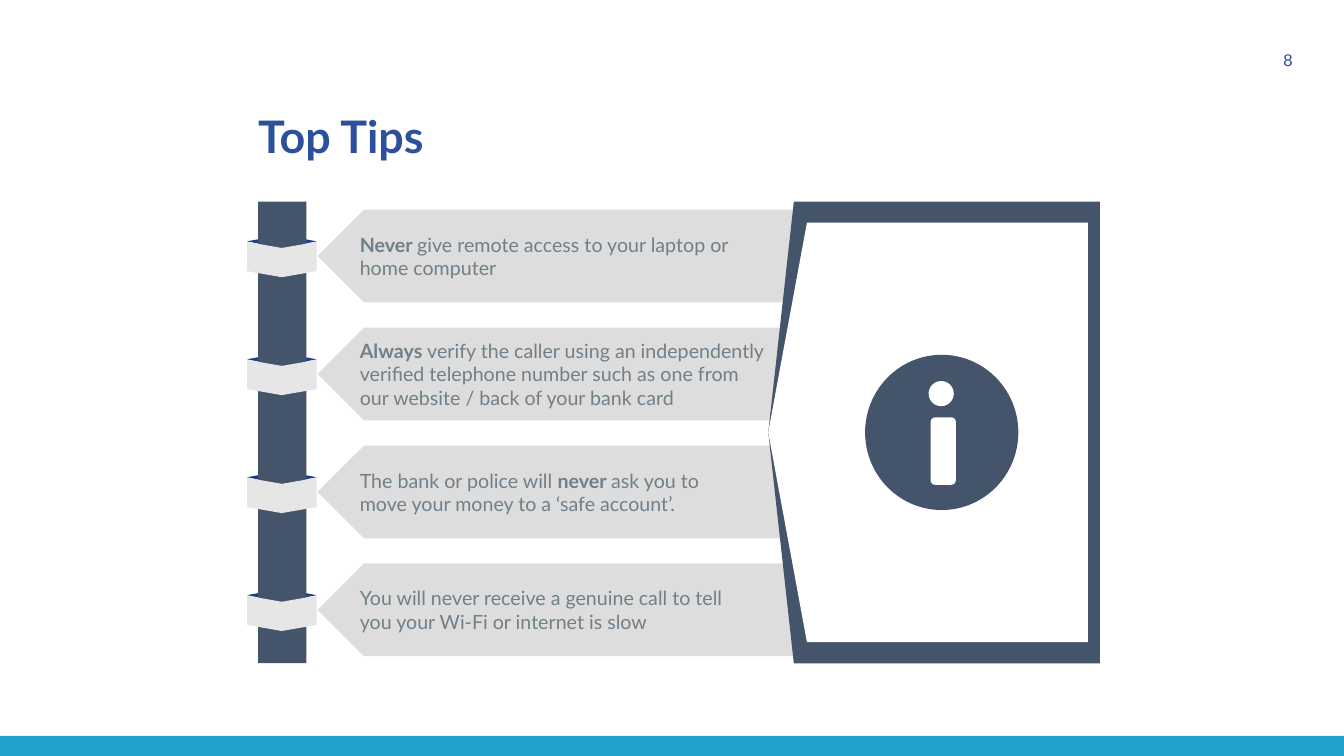
from pptx import Presentation
from pptx.dml.color import RGBColor
from pptx.enum.shapes import MSO_SHAPE
from pptx.enum.text import MSO_ANCHOR, MSO_AUTO_SIZE, PP_ALIGN
from pptx.oxml.ns import qn
from pptx.util import Inches, Pt

NAVY = "44546A"
BLUE = "2D509C"
WHITE = "FFFFFF"

RIBBON_LEFT, RIBBON_WIDTH = 2.45, 0.69
FIRST_TIP_TOP, TIP_STEP = 2.08, 1.17

# Each tip is a list of lines; each line is a list of (text, bold) runs.
TIPS = [
    [[("Never ", True), ("give remote access to your laptop or ", False)],
     [("home computer", False)]],
    [[("Always\u00a0", True), ("verify the caller using an independently ", False)],
     [("verified telephone number such as one from our\u00a0website / back of your bank card", False)]],
    [[("The bank or police will ", False), ("never ", True), ("ask you to ", False)],
     [("move your money to a ‘safe account’.", False)]],
    [[("You will never receive a genuine call to tell ", False)],
     [("you your Wi-Fi or internet is slow", False)]],
]


def rgb(color):
    return RGBColor.from_string(color)


def paint(shape, color):
    shape.shadow.inherit = False
    shape.fill.solid()
    shape.fill.fore_color.rgb = rgb(color)
    shape.line.fill.background()


def add_block(slide, kind, left, top, width, height, color, adjustment=None):
    shape = slide.shapes.add_shape(
        kind, Inches(left), Inches(top), Inches(width), Inches(height))
    paint(shape, color)
    if adjustment is not None:
        shape.adjustments[0] = adjustment
    return shape


def add_left_arrow(slide, left, top, width, height, color, adjustment=0.5):
    """Add a pentagon arrow whose point faces left."""
    shape = add_block(slide, MSO_SHAPE.PENTAGON, left, top, width, height, color, adjustment)
    shape.element.spPr.find(qn("a:xfrm")).set("flipH", "1")
    return shape


def write_text(shape, lines, *, size, color, font="Lato", align=PP_ALIGN.LEFT,
               anchor=MSO_ANCHOR.MIDDLE, inset=0, indent=0, line_spacing=1.0):
    frame = shape.text_frame
    frame.word_wrap = True
    frame.auto_size = MSO_AUTO_SIZE.NONE
    frame.vertical_anchor = anchor
    frame.margin_left = frame.margin_right = Inches(inset)
    frame.margin_top = frame.margin_bottom = Inches(inset)
    paragraph = frame.paragraphs[0]
    paragraph.alignment = align
    paragraph.line_spacing = line_spacing
    if indent:
        properties = paragraph._p.get_or_add_pPr()
        properties.set("marL", str(Inches(indent)))
        properties.set("indent", "0")
    for index, line in enumerate(lines):
        if index:
            paragraph.add_line_break()
        for text, bold in line:
            run = paragraph.add_run()
            run.text = text
            run.font.name = font
            run.font.size = Pt(size)
            run.font.bold = bold
            run.font.color.rgb = rgb(color)


def add_title(slide, text):
    title = slide.shapes.title
    title.left, title.top = Inches(2.56), Inches(1.22)
    title.width, title.height = Inches(8.47), Inches(0.4)
    write_text(title, [[(text, True)]], size=32, color=BLUE,
               anchor=MSO_ANCHOR.BOTTOM, line_spacing=0.9)


def add_page_number(slide, number):
    box = slide.shapes.add_textbox(Inches(12.34), Inches(0.39), Inches(0.48), Inches(0.3))
    write_text(box, [[(number, False)]], size=12, color=BLUE, font="Arial",
               align=PP_ALIGN.RIGHT, anchor=MSO_ANCHOR.BOTTOM)


def add_tip(slide, top, lines):
    arrow = add_left_arrow(slide, 3.15, top, 5.19, 0.92, "DDDDDD")
    write_text(arrow, lines, size=14, color="717F88", inset=0.1, indent=0.09)


def add_ribbon_back(slide, tip_top):
    add_block(slide, MSO_SHAPE.DIAMOND, RIBBON_LEFT, tip_top + 0.25, RIBBON_WIDTH, 0.13, "1D3B8D")


def add_ribbon_front(slide, tip_top):
    left, right = RIBBON_LEFT, RIBBON_LEFT + RIBBON_WIDTH
    middle = (left + right) / 2
    top, bottom, dip = tip_top + 0.32, tip_top + 0.61, 0.06
    outline = [(left, top), (middle, top + dip), (right, top),
               (right, bottom), (middle, bottom + dip), (left, bottom)]
    points = [(Inches(x), Inches(y)) for x, y in outline]
    builder = slide.shapes.build_freeform(*points[0])
    builder.add_line_segments(points[1:], close=True)
    paint(builder.convert_to_shape(), "E7E6E6")


def add_info_panel(slide):
    add_left_arrow(slide, 7.62, 2, 3.29, 4.58, NAVY, 0.077)
    add_left_arrow(slide, 7.62, 2.21, 3.17, 4.16, WHITE, 0.121)


def add_info_icon(slide):
    add_block(slide, MSO_SHAPE.OVAL, 8.58, 3.52, 1.52, 1.54, NAVY)
    add_block(slide, MSO_SHAPE.OVAL, 9.21, 3.78, 0.25, 0.25, WHITE)
    add_block(slide, MSO_SHAPE.ROUNDED_RECTANGLE, 9.23, 4.14, 0.25, 0.67, WHITE, 0.18)


def main():
    presentation = Presentation()
    presentation.slide_width = Inches(13.33)
    presentation.slide_height = Inches(7.5)
    slide = presentation.slides.add_slide(presentation.slide_layouts[5])

    add_page_number(slide, "8")
    add_title(slide, "Top Tips")
    tip_tops = [FIRST_TIP_TOP + index * TIP_STEP for index in range(len(TIPS))]
    for top, lines in zip(tip_tops, TIPS):
        add_tip(slide, top, lines)
        add_ribbon_back(slide, top)
    add_info_panel(slide)
    add_block(slide, MSO_SHAPE.RECTANGLE, 2.56, 2, 0.48, 4.58, NAVY)
    for top in tip_tops:
        add_ribbon_front(slide, top)
    add_info_icon(slide)
    add_block(slide, MSO_SHAPE.RECTANGLE, 0, 7.3, 13.33, 0.2, "20A2CB")

    presentation.save("out.pptx")


if __name__ == "__main__":
    main()
